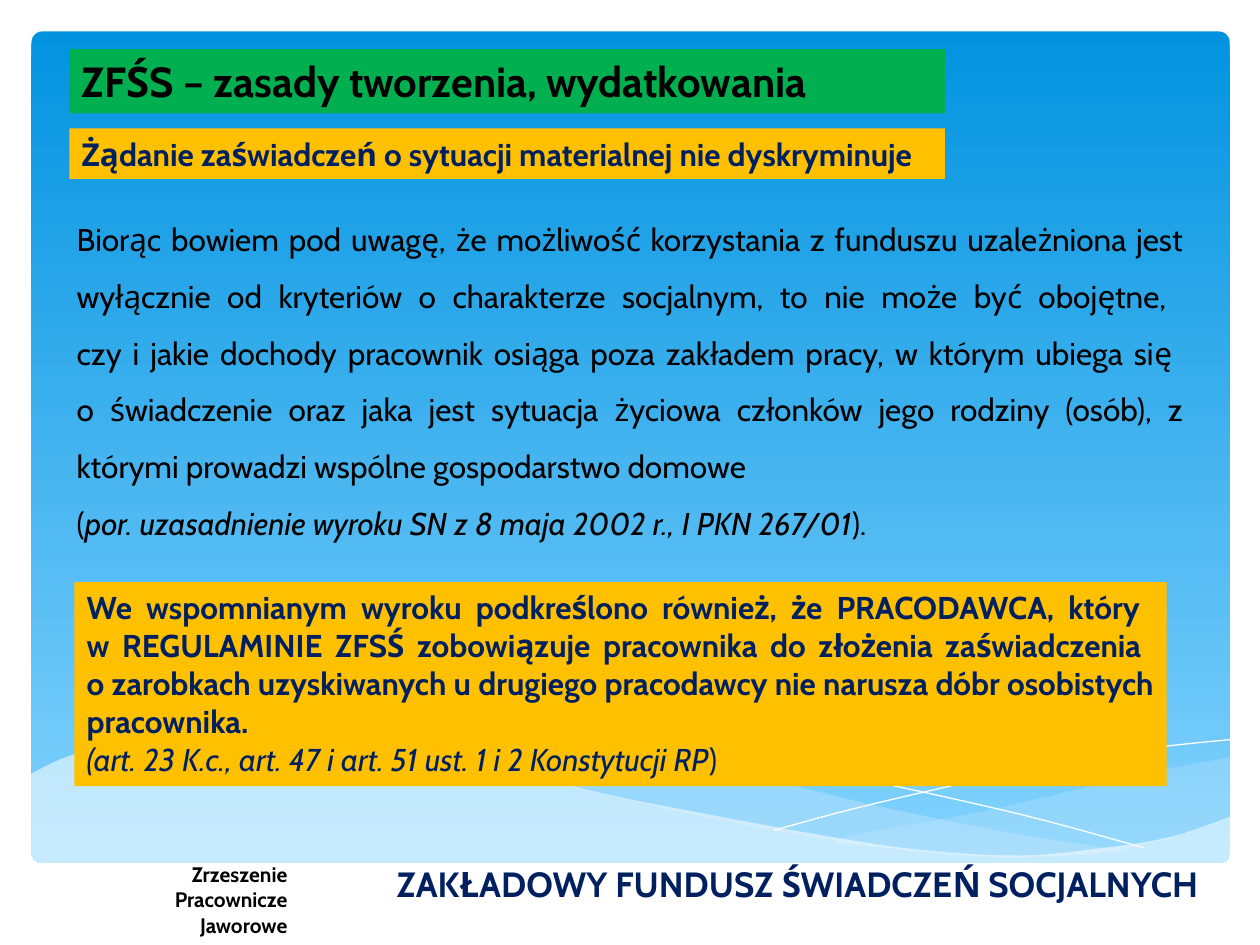
from dataclasses import dataclass

from lxml import etree
from pptx import Presentation
from pptx import util as u
from pptx.dml.color import RGBColor
from pptx.enum import shapes, text
from pptx.oxml.ns import qn

# Grid: 100 columns by 75 rows
WIDTH, HEIGHT = u.Inches(10), u.Inches(7.5)
COL, ROW = WIDTH / 100, HEIGHT / 75
FONT = "Cabin"
COLORS = {
    "sky_top": "0293E0", "sky_bottom": "83D3FE", "mist": "C6E7FC",
    "white": "FFFFFF", "green": "00B050", "amber": "FFC000",
    "navy": "002060", "black": "000000",
}
ALIGN = {"left": text.PP_ALIGN.LEFT, "center": text.PP_ALIGN.CENTER,
         "right": text.PP_ALIGN.RIGHT, "justify": text.PP_ALIGN.JUSTIFY}
Point = tuple[float, float]


@dataclass
class Run:
    text: str
    bold: bool = False
    italic: bool = False


@dataclass
class Block:
    """A text block; box is left, top, width, height in columns and rows."""
    box: tuple[float, float, float, float]
    paragraphs: list[list[Run]]
    size: int = 18
    color: str = "navy"
    fill: str | None = None
    align: str = "justify"
    spacing: float = 1.0


@dataclass
class Wave:
    """A smooth curve through points, closed over corners when filled."""
    points: list[Point]
    fill: str | None = None
    opacity: int = 100
    corners: tuple[Point, ...] = ()


def rgb(name: str) -> RGBColor:
    return RGBColor.from_string(COLORS[name])


def grid(box) -> list[int]:
    return [round(v * unit) for v, unit in zip(box, (COL, ROW, COL, ROW))]


def smooth(points: list[Point], steps: int = 6) -> list[Point]:
    """Catmull-Rom interpolation through the points."""
    padded = [points[0], *points, points[-1]]
    curve = [points[0]]
    for a, b, c, d in zip(padded, padded[1:], padded[2:], padded[3:]):
        for t in (i / steps for i in range(1, steps + 1)):
            curve.append(tuple(
                0.5 * (2 * q + (r - p) * t + (2 * p - 5 * q + 4 * r - s) * t ** 2
                       + (3 * q - p - 3 * r + s) * t ** 3)
                for p, q, r, s in zip(a, b, c, d)))
    return curve


def add_panel(slide, box) -> None:
    sp = slide.shapes.add_shape(shapes.MSO_SHAPE.ROUNDED_RECTANGLE, *grid(box))
    sp.shadow.inherit = False
    sp.adjustments[0] = 0.013
    sp.line.fill.background()
    sp.fill.gradient()
    sp.fill.gradient_angle = 270
    for stop, name, position in zip(sp.fill.gradient_stops,
                                    ("sky_top", "sky_bottom"), (0, 1)):
        stop.color.rgb = rgb(name)
        stop.position = position


def add_wave(slide, wave: Wave) -> None:
    outline = [*smooth(wave.points), *wave.corners]
    outline = [(round(x * COL), round(y * ROW)) for x, y in outline]
    builder = slide.shapes.build_freeform(*outline[0])
    builder.add_line_segments(outline[1:], close=wave.fill is not None)
    sp = builder.convert_to_shape()
    sp.shadow.inherit = False
    if wave.fill:
        sp.fill.solid()
        sp.fill.fore_color.rgb = rgb(wave.fill)
        color = sp._element.spPr.find(qn("a:solidFill"))[0]
        etree.SubElement(color, qn("a:alpha"), val=str(wave.opacity * 1000))
        sp.line.fill.background()
    else:
        sp.fill.background()
        sp.line.color.rgb = rgb("white")
        sp.line.width = u.Pt(0)


def add_text(p, content: str, *, size: int, color: str,
             bold: bool = False, italic: bool = False) -> None:
    for i, line in enumerate(content.split("\n")):
        if i:
            p.add_line_break()
        r = p.add_run()
        r.text = line
        f = r.font
        f.name, f.size, f.bold, f.italic = FONT, u.Pt(size), bold, italic
        f.color.rgb = rgb(color)


def add_block(slide, block: Block) -> None:
    if block.fill:
        sp = slide.shapes.add_shape(shapes.MSO_SHAPE.RECTANGLE, *grid(block.box))
        sp.shadow.inherit = False
        sp.fill.solid()
        sp.fill.fore_color.rgb = rgb(block.fill)
        sp.line.fill.background()
    else:
        sp = slide.shapes.add_textbox(*grid(block.box))
    tf = sp.text_frame
    tf.word_wrap = True
    tf.vertical_anchor = text.MSO_ANCHOR.TOP
    for i, runs in enumerate(block.paragraphs):
        p = tf.add_paragraph() if i else tf.paragraphs[0]
        p.alignment = ALIGN[block.align]
        p.line_spacing = block.spacing
        for run in runs:
            add_text(p, run.text, size=block.size, color=block.color,
                     bold=run.bold, italic=run.italic)


PANEL = (2.5, 2.5, 95.1, 66)

WAVES = [
    # Right-hand swell
    Wave([(97.7, 60.1), (92.2, 61.1), (86.2, 62.5), (78, 64.4), (66.2, 66.7),
          (71.9, 67.4), (77, 67.9), (81.5, 68), (86.4, 67.7), (90.7, 67.1),
          (94.4, 66.1), (97.7, 64.9)], "mist", 29),
    # Central swell
    Wave([(89.4, 67.5), (80.8, 66.2), (70.7, 64.2), (61.4, 62), (54.2, 60.5),
          (46.5, 59.3), (40, 58.8), (34.5, 58.8), (28.7, 59.3), (36.3, 60.5),
          (45, 62.4), (53, 64.2), (61.9, 66), (69.6, 67.2), (76.2, 67.9),
          (81.9, 68), (86.8, 67.8), (89.4, 67.5)], "mist", 40),
    # Thin crossing lines
    Wave([(31, 59.7), (36.3, 59), (43.3, 58.9), (51.1, 59.4), (58.2, 60.2),
          (66.6, 61.5), (76.1, 63.5), (83.2, 65.2), (90.8, 67.3)]),
    Wave([(61.4, 65.9), (67.3, 64.3), (74.9, 62.5), (83.7, 60.6),
          (91.1, 59.4), (97.6, 58.7)]),
    # Foreground wave
    Wave([(97.7, 64.8), (93, 66.4), (87.5, 67.3), (80.9, 67.9), (72.6, 67.4),
          (64.7, 66.2), (55.5, 64.5), (47.5, 62.9), (39.1, 60.7), (31.5, 59.4),
          (25, 58.8), (19.3, 58.6), (13.2, 58.8), (8.5, 59.3), (5.2, 60.1),
          (2.3, 61.5)], "white", 55, ((2.3, 73.1), (97.7, 73.1))),
]

BLOCKS = [
    Block((5.5, 3.9, 69.5, 5.1),
          [[Run("ZFŚS – zasady tworzenia, wydatkowania", bold=True)]],
          size=24, color="black", fill="green"),
    Block((28.9, 68, 68.8, 4.4),
          [[Run("ZAKŁADOWY FUNDUSZ ŚWIADCZEŃ SOCJALNYCH", bold=True)]],
          size=20, align="center"),
    Block((5.5, 10.2, 69.5, 4),
          [[Run("Żądanie zaświadczeń o sytuacji materialnej nie dyskryminuje",
                bold=True)]], fill="amber", align="left"),
    Block((5.1, 15.5, 89.8, 28.3), [
        [Run("Biorąc bowiem pod uwagę, że możliwość korzystania z funduszu "
             "uzależniona jest wyłącznie od kryteriów o charakterze socjalnym, "
             "to nie może być obojętne, \nczy i jakie dochody pracownik osiąga "
             "poza zakładem pracy, w którym ubiega się \no świadczenie oraz jaka "
             "jest sytuacja życiowa członków jego rodziny (osób), z którymi "
             "prowadzi wspólne gospodarstwo domowe")],
        [Run("("), Run("por. uzasadnienie wyroku SN z 8 maja 2002 r., "
                       "I PKN 267/01", italic=True), Run(").")],
    ], color="black", spacing=1.5),
    Block((5.9, 46.2, 86.7, 16.2), [
        [Run("We wspomnianym wyroku podkreślono również, że PRACODAWCA, który \n"
             "w REGULAMINIE ZFSŚ zobowiązuje pracownika do złożenia "
             "zaświadczenia \no zarobkach uzyskiwanych u drugiego pracodawcy "
             "nie narusza dóbr osobistych pracownika.", bold=True)],
        [Run("(art. 23 K.c., art. 47 i art. 51 ust. 1 i 2 Konstytucji RP",
             italic=True), Run(")")],
    ], fill="amber"),
    Block((3.5, 67.9, 20.3, 7.1),
          [[Run("Zrzeszenie\nPracownicze\nJaworowe", bold=True)]],
          size=12, color="black", align="right"),
]


def main() -> None:
    prs = Presentation()
    prs.slide_width, prs.slide_height = WIDTH, HEIGHT
    slide = prs.slides.add_slide(prs.slide_layouts[6])
    add_panel(slide, PANEL)
    for wave in WAVES:
        add_wave(slide, wave)
    for block in BLOCKS:
        add_block(slide, block)
    prs.save("out.pptx")


if __name__ == "__main__":
    main()
